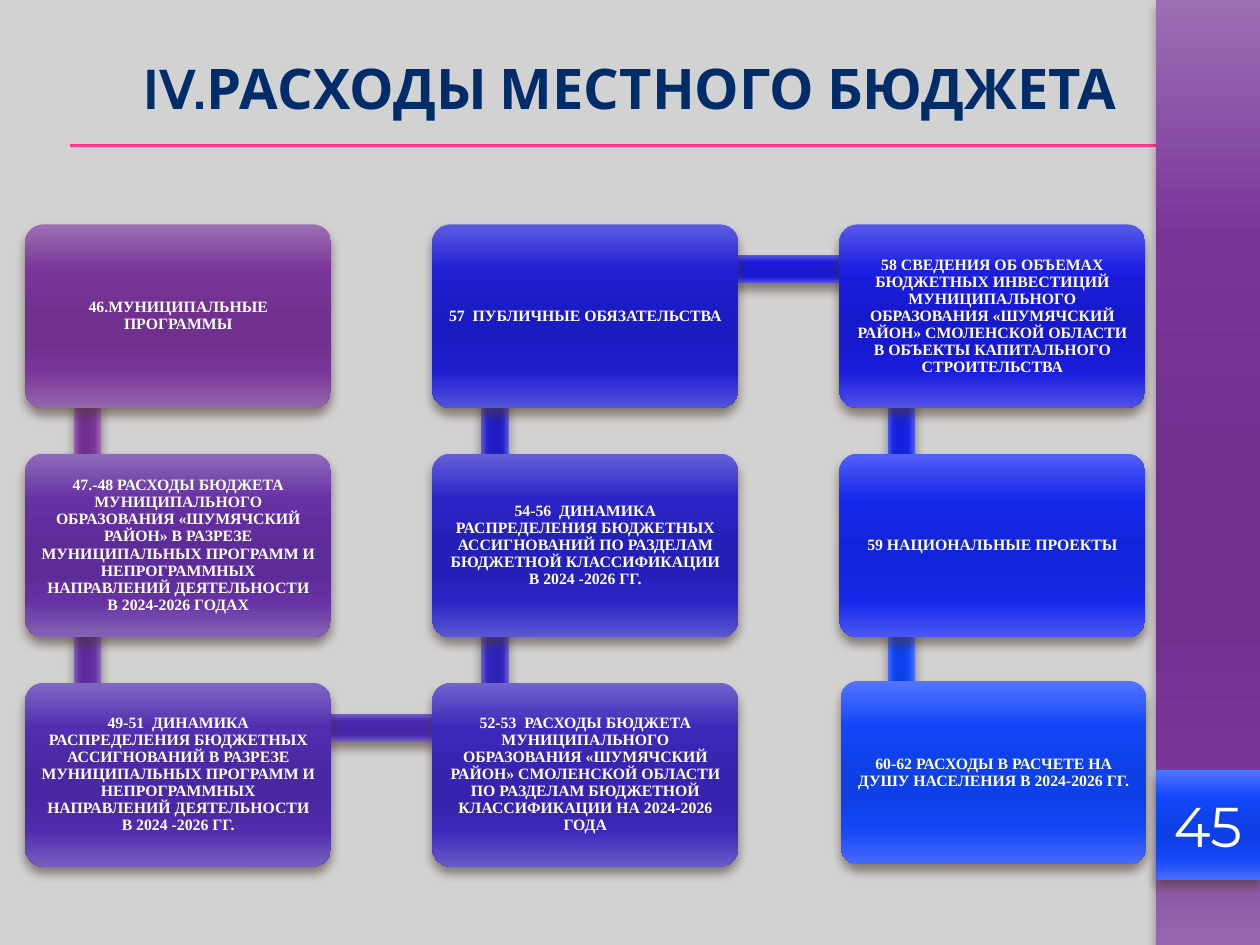
from pptx import Presentation
from pptx.dml.color import RGBColor
from pptx.enum.shapes import MSO_CONNECTOR as LINK, MSO_SHAPE as KIND
from pptx.enum.text import MSO_ANCHOR as ANCHOR, PP_ALIGN as ALIGN
from pptx.oxml import parse_xml
from pptx.oxml.ns import nsdecls
from pptx.util import Pt

rgb = RGBColor.from_string
PLUM = "9C6FB3 7A3599 71308E 7A3598 9566AD"
BLUE = "5374FF 1147F8 0E40E7 1147F6 476AFD"


def block(kind, x, y, w, h, tones):
    form = slide.shapes.add_shape(kind, Pt(x), Pt(y), Pt(w), Pt(h))
    form.line.fill.background()
    form.shadow.inherit = False
    top, high, mid, low, end = tones.split()
    stops = zip((0, 25, 50, 65, 80, 100), (top, high, mid, mid, low, end))
    marks = "".join(
        f'<a:gs pos="{pos * 1000}"><a:srgbClr val="{tone}"/></a:gs>' for pos, tone in stops)
    props = form._element.spPr
    props.find("{*}ln").addprevious(parse_xml(
        f'<a:gradFill {nsdecls("a")} rotWithShape="1"><a:gsLst>{marks}</a:gsLst>'
        '<a:lin ang="5400000" scaled="0"/></a:gradFill>'))
    props.find("{*}effectLst").append(parse_xml(
        f'<a:outerShdw {nsdecls("a")} blurRad="{Pt(6)}" dist="{Pt(4)}" dir="5400000" '
        'rotWithShape="0"><a:srgbClr val="4E3B30"><a:alpha val="60000"/></a:srgbClr>'
        '</a:outerShdw>'))
    return form


def write(form, text, face, size, tone, bold, inset):
    frame = form.text_frame
    frame.word_wrap = True
    frame.vertical_anchor = ANCHOR.MIDDLE
    frame.margin_left = frame.margin_right = Pt(inset)
    frame.margin_top = frame.margin_bottom = Pt(inset)
    frame.text = text
    para = frame.paragraphs[0]
    para.alignment = ALIGN.CENTER
    para.font.name = face
    para.font.size = Pt(size)
    para.font.bold = bold
    para.font.color.rgb = rgb(tone)
    return frame


deck = Presentation()
deck.slide_width, deck.slide_height = Pt(720), Pt(540)
slide = deck.slides.add_slide(deck.slide_layouts[5])
slide.background.fill.solid()
slide.background.fill.fore_color.rgb = rgb("D2D2D2")

for y in (82.8, 83.5):
    rule = slide.shapes.add_connector(LINK.STRAIGHT, Pt(40.3), Pt(y), Pt(720), Pt(y))
    rule.line.color.rgb = rgb("FF388C")
    rule.line.width = Pt(0.75)
    rule._element.spPr.append(parse_xml(f'<a:effectLst {nsdecls("a")}/>'))

block(KIND.RECTANGLE, 660.5, 0, 59.5, 540, PLUM)

title = slide.shapes.title
title.left, title.top, title.width, title.height = Pt(42.5), Pt(15.1), Pt(626.4), Pt(105.8)
frame = write(title, "IV.РАСХОДЫ МЕСТНОГО БЮДЖЕТА", "Cabin", 32, "002D6A", True, 3.6)
frame.margin_left = Pt(12)
frame.margin_bottom = Pt(40)

page = block(KIND.RECTANGLE, 660.5, 440, 59.5, 62.5, BLUE)
write(page, "45", "Montserrat", 32, "FFFFFF", False, 3.6)

LEFT, TOP, WIDE, HIGH = 14.4, 128.2, 174.8, 105
STEP, DROP = 232.6, 131
SPAN, THICK = 130.6, 15.8

bars = [
    (0, 0, 90, PLUM),
    (0, 1, 90, "8B6BBD 6430A6 5C2B9A 6330A5 8462B7"),
    (0, 2, 0, "7A67C7 4B2BB3 4427A6 4A2BB1 725EC1"),
    (1, 1, 270, "6A63D2 3326C0 2E22B2 3326BF 625ACC"),
    (1, 0, 270, "5F5EDD 2321CD 1E1DBF 2321CC 5655D8"),
    (1, 0, 0, "595AE9 1C1DDB 1819CC 1C1DDA 5051E4"),
    (2, 0, 90, "545EF6 1726E9 1322D9 1726E8 4C55F0"),
    (2, 1, 90, BLUE),
]
for col, row, turn, tones in bars:
    x, y = LEFT + col * STEP, TOP + row * DROP
    if turn:
        bar = block(KIND.RECTANGLE, x + 35.6 - SPAN / 2, y + 90.7 - THICK / 2, SPAN, THICK, tones)
        bar.rotation = turn
    else:
        block(KIND.RECTANGLE, x + 36, y + 17.6, STEP - 0.8, THICK, tones)

cards = [
    (0, 0, PLUM, "46.МУНИЦИПАЛЬНЫЕ ПРОГРАММЫ"),
    (0, 1, "8D6BBB 6731A4 5E2C98 6631A3 8663B5",
     "47.-48 РАСХОДЫ БЮДЖЕТА МУНИЦИПАЛЬНОГО ОБРАЗОВАНИЯ «ШУМЯЧСКИЙ РАЙОН» В РАЗРЕЗЕ "
     "МУНИЦИПАЛЬНЫХ ПРОГРАММ И НЕПРОГРАММНЫХ НАПРАВЛЕНИЙ ДЕЯТЕЛЬНОСТИ В 2024-2026 ГОДАХ"),
    (0, 2, "7E68C4 512DAF 4A28A3 502CAE 765FBF",
     "49-51  ДИНАМИКА РАСПРЕДЕЛЕНИЯ БЮДЖЕТНЫХ АССИГНОВАНИЙ В РАЗРЕЗЕ МУНИЦИПАЛЬНЫХ "
     "ПРОГРАММ И НЕПРОГРАММНЫХ НАПРАВЛЕНИЙ ДЕЯТЕЛЬНОСТИ В 2024 -2026 ГГ."),
    (1, 2, "7064CE 3C28BB 3624AE 3B28BA 675BC8",
     "52-53  РАСХОДЫ БЮДЖЕТА МУНИЦИПАЛЬНОГО ОБРАЗОВАНИЯ «ШУМЯЧСКИЙ РАЙОН» СМОЛЕНСКОЙ "
     "ОБЛАСТИ ПО РАЗДЕЛАМ БЮДЖЕТНОЙ КЛАССИФИКАЦИИ НА 2024-2026 ГОДА"),
    (1, 1, "6460D8 2A24C7 251FB9 2A24C5 5B58D2",
     "54-56  ДИНАМИКА РАСПРЕДЕЛЕНИЯ БЮДЖЕТНЫХ АССИГНОВАНИЙ ПО РАЗДЕЛАМ БЮДЖЕТНОЙ "
     "КЛАССИФИКАЦИИ В 2024 -2026 ГГ."),
    (1, 0, "5C5CE2 201FD3 1B1BC4 1F1FD1 5453DC", "57  ПУБЛИЧНЫЕ ОБЯЗАТЕЛЬСТВА"),
    (2, 0, "585AEC 1B1DDF 1719CF 1B1DDD 4F51E7",
     "58 СВЕДЕНИЯ ОБ ОБЪЕМАХ БЮДЖЕТНЫХ ИНВЕСТИЦИЙ МУНИЦИПАЛЬНОГО ОБРАЗОВАНИЯ «ШУМЯЧСКИЙ "
     "РАЙОН» СМОЛЕНСКОЙ ОБЛАСТИ В ОБЪЕКТЫ КАПИТАЛЬНОГО СТРОИТЕЛЬСТВА"),
    (2, 1, "545FF7 1629EB 1224DB 1629EA 4B57F2", "59 НАЦИОНАЛЬНЫЕ ПРОЕКТЫ"),
    (2, 2, BLUE, "60-62 РАСХОДЫ В РАСЧЕТЕ НА ДУШУ НАСЕЛЕНИЯ В 2024-2026 ГГ."),
]
for col, row, tones, text in cards:
    card = block(KIND.ROUNDED_RECTANGLE, LEFT + col * STEP, TOP + row * DROP, WIDE, HIGH, tones)
    card.adjustments[0] = 0.1
    frame = write(card, text, "Times New Roman", 9, "FFFFFF", True, 5.8)
    frame.paragraphs[0].line_spacing = 0.9

last = card
last.left += Pt(0.7)
last.top -= Pt(1.2)

deck.save("out.pptx")
